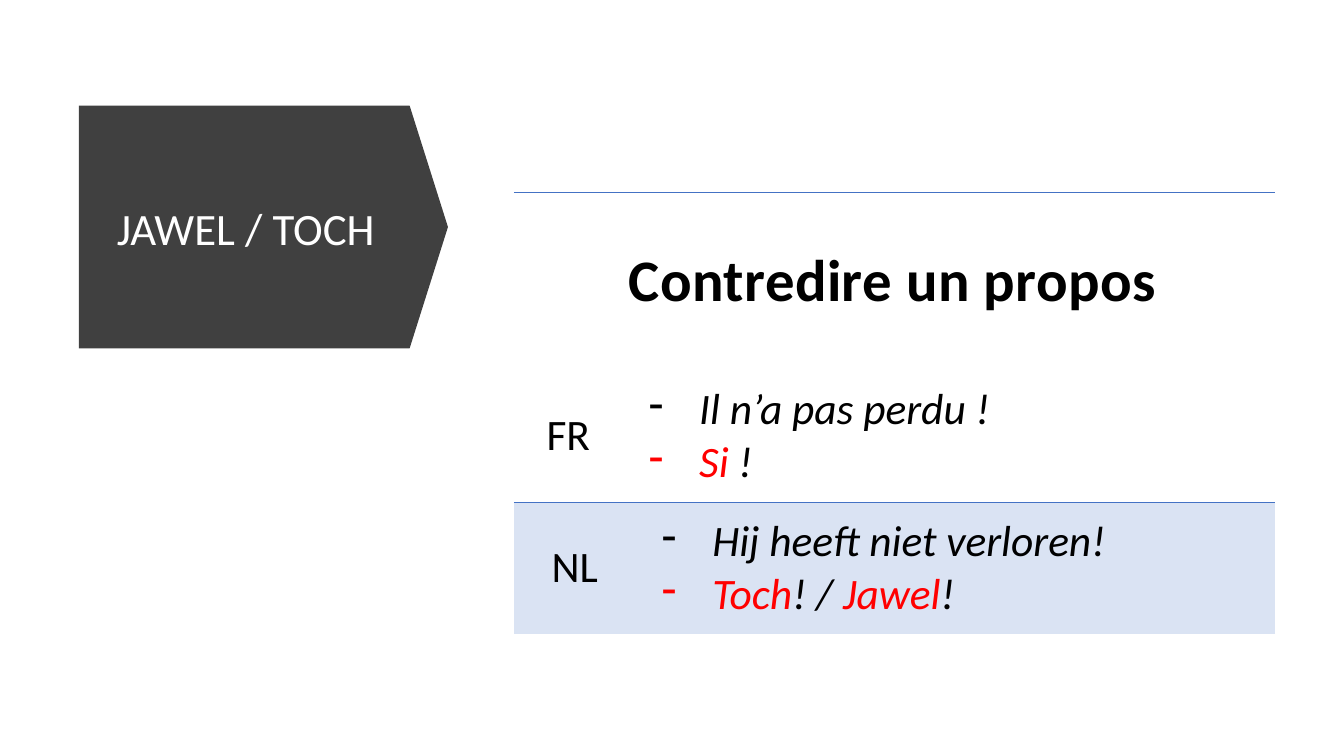
import dataclasses

import pptx
import pptx.dml.color
import pptx.enum.shapes
import pptx.enum.text
import pptx.oxml
import pptx.oxml.ns
import pptx.util
from pptx.util import Cm

ALIGN = pptx.enum.text.PP_ALIGN
MIDDLE = pptx.enum.text.MSO_ANCHOR.MIDDLE
NO_STYLE = "{2D5ABB26-0587-4C30-8999-92F81FD0307C}"


@dataclasses.dataclass(frozen=True)
class Theme:
    font: str = "Calibri"
    black: str = "000000"
    white: str = "FFFFFF"
    accent: str = "FF0000"
    arrow: str = "404040"
    rule: str = "4472C4"
    band: str = "DAE3F3"
    title_size: int = 32
    heading_size: int = 42
    body_size: int = 31


THEME = Theme()


def rgb(color):
    return pptx.dml.color.RGBColor.from_string(color)


def add_text(paragraph, text, size=THEME.body_size, color=THEME.black,
             bold=False, italic=False, spacing=0):
    """Add one formatted run; spacing is in points."""
    run = paragraph.add_run()
    run.text = text
    font = run.font
    font.name, font.size = THEME.font, pptx.util.Pt(size)
    font.bold, font.italic = bold, italic
    font.color.rgb = rgb(color)
    if spacing:
        run._r.get_or_add_rPr().set("spc", str(round(spacing * 100)))


def add_dash(paragraph):
    properties = paragraph._p.get_or_add_pPr()
    properties.set("marL", str(Cm(1.27)))
    properties.set("indent", str(-Cm(1.27)))
    bullet = pptx.oxml.parse_xml(
        f'<a:buChar {pptx.oxml.ns.nsdecls("a")} char="-"/>')
    properties.append(bullet)


def add_top_rule(cell, points):
    line = pptx.oxml.parse_xml(
        f'<a:lnT {pptx.oxml.ns.nsdecls("a")} w="{pptx.util.Pt(points)}">'
        f'<a:solidFill><a:srgbClr val="{THEME.rule}"/></a:solidFill></a:lnT>')
    cell._tc.get_or_add_tcPr().insert(0, line)


class SlideBuilder:
    def __init__(self, presentation, theme):
        self.theme = theme
        self.slide = presentation.slides.add_slide(presentation.slide_layouts[5])

    def title(self, text, left, top, width, height):
        shape = self.slide.shapes.title
        shape.left, shape.top = Cm(left), Cm(top)
        shape.width, shape.height = Cm(width), Cm(height)
        frame = shape.text_frame
        frame.auto_size = pptx.enum.text.MSO_AUTO_SIZE.NONE
        frame.word_wrap, frame.vertical_anchor = True, MIDDLE
        paragraph = frame.paragraphs[0]
        paragraph.alignment, paragraph.line_spacing = ALIGN.LEFT, 0.9
        add_text(paragraph, text, size=self.theme.title_size,
                 color=self.theme.white)

    def arrow_behind_title(self, left, top, width, height):
        shape = self.slide.shapes.add_shape(
            pptx.enum.shapes.MSO_SHAPE.DOWN_ARROW,
            Cm(left), Cm(top), Cm(width), Cm(height))
        shape.rotation = 270
        shape.adjustments[0], shape.adjustments[1] = 1, 0.158
        shape.shadow.inherit = False
        shape.fill.solid()
        shape.fill.fore_color.rgb = rgb(self.theme.arrow)
        shape.line.fill.background()
        self.slide.shapes.title._element.addprevious(shape._element)

    def table(self, left, top, columns, rows):
        frame = self.slide.shapes.add_table(
            len(rows), len(columns), Cm(left), Cm(top),
            Cm(sum(columns)), Cm(sum(rows)))
        table = frame.table
        table.first_row = table.horz_banding = False
        table._tbl.tblPr.find(pptx.oxml.ns.qn("a:tableStyleId")).text = NO_STYLE
        for column, width in zip(table.columns, columns):
            column.width = Cm(width)
        for row, height in zip(table.rows, rows):
            row.height = Cm(height)
        return table

    def cell(self, cell, lines, dashes=False, left=0, right=0.66,
             fill=None, rule=0, **text_format):
        """Fill a cell; each line is a list of (text, color) parts."""
        cell.vertical_anchor = MIDDLE
        cell.margin_left, cell.margin_right = Cm(left), Cm(right)
        cell.margin_top = cell.margin_bottom = Cm(0.33)
        if rule:
            add_top_rule(cell, rule)
        if fill:
            cell.fill.solid()
            cell.fill.fore_color.rgb = rgb(fill)
        else:
            cell.fill.background()
        for index, parts in enumerate(lines):
            frame = cell.text_frame
            paragraph = frame.add_paragraph() if index else frame.paragraphs[0]
            paragraph.alignment = ALIGN.LEFT if dashes else ALIGN.CENTER
            if dashes:
                add_dash(paragraph)
            for text, color in parts:
                add_text(paragraph, text, color=color, **text_format)


def main():
    presentation = pptx.Presentation()
    presentation.slide_width, presentation.slide_height = Cm(33.87), Cm(19.05)
    builder = SlideBuilder(presentation, THEME)
    black, red = THEME.black, THEME.accent

    # Title on its arrow
    builder.title("JAWEL / TOCH", 2.69, 3.35, 7.42, 4.95)
    builder.arrow_behind_title(3.58, 1.07, 6.12, 9.3)

    # Table heading
    table = builder.table(12.95, 4.85, columns=[3.4, 15.77],
                          rows=[4.47, 3.33, 3.33])
    heading = table.cell(0, 0)
    heading.merge(table.cell(0, 1))
    builder.cell(heading, [[("Contredire un propos", black)]], right=0.08,
                 rule=1.5, size=THEME.heading_size, bold=True, spacing=0.3)

    # One row per language
    languages = [
        ("FR", [[("Il n’a pas perdu !", black)],
                [("Si", red), (" !", black)]], {}),
        ("NL", [[("Hij heeft niet verloren!", black)],
                [("Toch", red), ("! / ", black), ("Jawel", red), ("!", black)]],
         {"left": 0.33, "fill": THEME.band, "rule": 0.75}),
    ]
    for row, (language, examples, style) in enumerate(languages, start=1):
        builder.cell(table.cell(row, 0), [[(language, black)]], **style)
        builder.cell(table.cell(row, 1), examples, dashes=True, italic=True,
                     **style)

    presentation.save("out.pptx")


if __name__ == "__main__":
    main()
